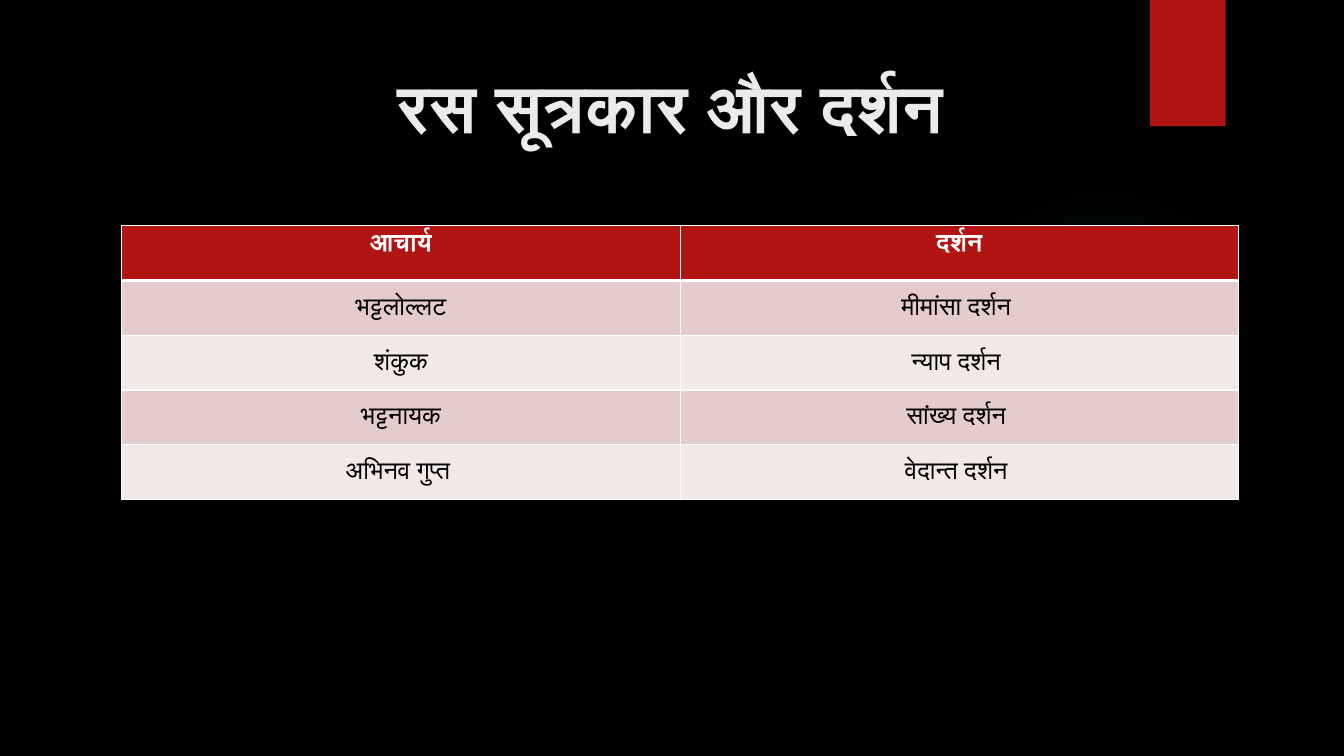
from dataclasses import dataclass

from lxml import etree
from pptx import Presentation
from pptx.dml.color import RGBColor
from pptx.enum.shapes import MSO_SHAPE
from pptx.enum.text import MSO_ANCHOR, PP_ALIGN
from pptx.oxml import parse_xml
from pptx.oxml.ns import nsdecls, qn
from pptx.util import Cm, Pt


@dataclass(frozen=True)
class Theme:
    background: str = "000000"
    accent: str = "B01513"
    glow: str = "50B9C1"
    title: str = "EBEBEB"
    header_text: str = "FFFFFF"
    body_text: str = "000000"
    border: str = "FFFFFF"
    bands: tuple = ("E4CCCC", "F2E8E7")
    title_font: str = "Arial"
    table_font: str = "Quicksand"
    title_size: int = 48
    table_size: int = 18


theme = Theme()


def format_text(para, font_name, size, color, bold):
    para.alignment = PP_ALIGN.CENTER
    for span in para.runs:
        span.font.name = font_name
        span.font.size = Pt(size)
        span.font.bold = bold
        span.font.color.rgb = RGBColor.from_string(color)


def add_borders(cell, widths):
    properties = cell._tc.get_or_add_tcPr()
    for position, (side, width) in enumerate(widths.items()):
        line = etree.Element(qn(f"a:ln{side}"), w=str(Pt(width)))
        fill = etree.SubElement(line, qn("a:solidFill"))
        etree.SubElement(fill, qn("a:srgbClr"), val=theme.border)
        properties.insert(position, line)


deck = Presentation()
deck.slide_width, deck.slide_height = Cm(33.87), Cm(19.05)
page = deck.slides.add_slide(deck.slide_layouts[6])
page.background.fill.solid()
page.background.fill.fore_color.rgb = RGBColor.from_string(theme.background)

glow = page.shapes.add_shape(MSO_SHAPE.OVAL, Cm(23.9), Cm(4.65), Cm(7.82), Cm(7.82))
glow.shadow.inherit = False
glow.line.fill.background()
stops = "".join(
    f'<a:gs pos="{position * 1000}"><a:srgbClr val="{theme.glow}">'
    f'<a:alpha val="{opacity * 1000}"/></a:srgbClr></a:gs>'
    for position, opacity in ((0, 7), (36, 6), (69, 0))
)
gradient = parse_xml(
    f'<a:gradFill {nsdecls("a")}><a:gsLst>{stops}</a:gsLst><a:path path="circle">'
    '<a:fillToRect l="50000" t="50000" r="50000" b="50000"/></a:path></a:gradFill>'
)
glow._element.spPr.find(qn("a:prstGeom")).addnext(gradient)

ribbon = page.shapes.add_shape(MSO_SHAPE.RECTANGLE, Cm(28.98), Cm(0), Cm(1.91), Cm(3.18))
ribbon.shadow.inherit = False
ribbon.fill.solid()
ribbon.fill.fore_color.rgb = RGBColor.from_string(theme.accent)
ribbon.line.fill.background()

title_box = page.shapes.add_textbox(Cm(4.06), Cm(1.52), Cm(26.14), Cm(3.89))
title_box.text_frame.word_wrap = True
title_box.text_frame.vertical_anchor = MSO_ANCHOR.TOP
title_box.text_frame.text = "रस सूत्रकार और दर्शन "
format_text(title_box.text_frame.paragraphs[0], theme.title_font, theme.title_size, theme.title, True)

rows = (
    ("आचार्य", "दर्शन"),
    ("भट्टलोल्लट", "मीमांसा दर्शन "),
    ("शंकुक", "न्याप दर्शन "),
    ("भट्टनायक", "सांख्य दर्शन "),
    ("अभिनव गुप्त ", "वेदान्त दर्शन "),
)
row_height, column_width = Cm(1.38), Cm(14.07)
table = page.shapes.add_table(
    len(rows), 2, Cm(3.07), Cm(5.69), column_width * 2, row_height * len(rows)
).table
for column in table.columns:
    column.width = column_width

for row_index, row in enumerate(rows):
    table.rows[row_index].height = row_height
    is_header = row_index == 0
    fill_color = theme.accent if is_header else theme.bands[(row_index - 1) % 2]
    text_color = theme.header_text if is_header else theme.body_text
    for column_index, text in enumerate(row):
        cell = table.cell(row_index, column_index)
        cell.text_frame.text = text
        cell.vertical_anchor = MSO_ANCHOR.TOP if is_header else MSO_ANCHOR.MIDDLE
        cell.fill.solid()
        cell.fill.fore_color.rgb = RGBColor.from_string(fill_color)
        format_text(
            cell.text_frame.paragraphs[0], theme.table_font, theme.table_size, text_color, is_header
        )
        add_borders(
            cell, {"L": 1, "R": 1, "T": 3 if row_index == 1 else 1, "B": 3 if is_header else 1}
        )

deck.save("out.pptx")
